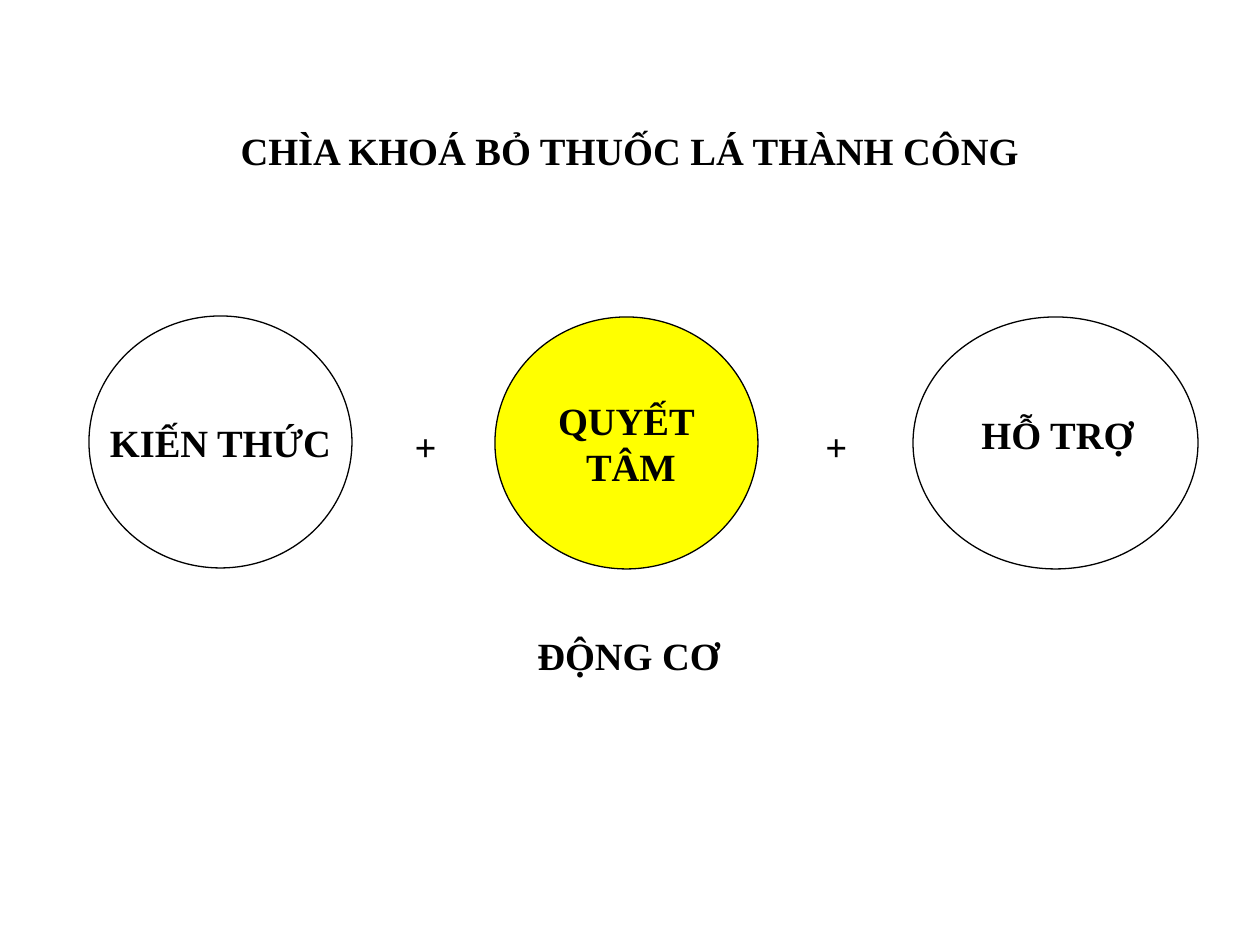
from pptx import Presentation
from pptx.dml.color import RGBColor
from pptx.enum.shapes import MSO_SHAPE
from pptx.enum.text import MSO_ANCHOR, PP_ALIGN
from pptx.util import Pt

PX = 914400 // 126
BLACK = RGBColor(0, 0, 0)
WHITE = RGBColor(255, 255, 255)
YELLOW = RGBColor(255, 255, 0)


def px(*lengths):
    return [length * PX for length in lengths]


def write(frame, lines, align, spacing=None):
    """Put one bold paragraph per line into a text frame."""
    frame.text = "\n".join(lines)
    for paragraph in frame.paragraphs:
        paragraph.alignment = align
        paragraph.line_spacing = spacing
        font = paragraph.font
        font.name = "Times New Roman"
        font.size = Pt(22)
        font.bold = True
        font.color.rgb = BLACK


deck = Presentation()
deck.slide_width, deck.slide_height = px(1260, 945)
slide = deck.slides.add_slide(deck.slide_layouts[5])

title = slide.shapes.title
title.left, title.top, title.width, title.height = px(228, 74, 810, 158)
title.fill.solid()
title.fill.fore_color.rgb = WHITE
title.text_frame.vertical_anchor = MSO_ANCHOR.MIDDLE
write(title.text_frame, ["CHÌA KHOÁ BỎ THUỐC LÁ THÀNH CÔNG"], PP_ALIGN.LEFT, 0.9)

# The three keys: left, top, width, fill, lines
keys = [
    (89, 316, 263, WHITE, ["KIẾN THỨC"]),
    (913, 317, 285, WHITE, []),
    (495, 317, 263, YELLOW, ["QUYẾT", " TÂM"]),
]
for left, top, width, color, lines in keys:
    key = slide.shapes.add_shape(MSO_SHAPE.OVAL, *px(left, top, width, 252))
    key.shadow.inherit = False
    key.fill.solid()
    key.fill.fore_color.rgb = color
    key.line.color.rgb = BLACK
    key.line.width = Pt(0.75)
    if lines:
        key.text_frame.word_wrap = False
        key.text_frame.vertical_anchor = MSO_ANCHOR.MIDDLE
        write(key.text_frame, lines, PP_ALIGN.CENTER)

labels = [
    (229, 422, 393, 60, "+", PP_ALIGN.CENTER, 0.9),
    (640, 422, 393, 79, "+", PP_ALIGN.CENTER, 0.9),
    (932, 410, 251, 68, "HỖ TRỢ", PP_ALIGN.CENTER, 0.9),
    (525, 626, 215, 59, "ĐỘNG CƠ", PP_ALIGN.LEFT, None),
]
for left, top, width, height, text, align, spacing in labels:
    label = slide.shapes.add_textbox(*px(left, top, width, height))
    label.text_frame.word_wrap = True
    write(label.text_frame, [text], align, spacing)

deck.save("out.pptx")
